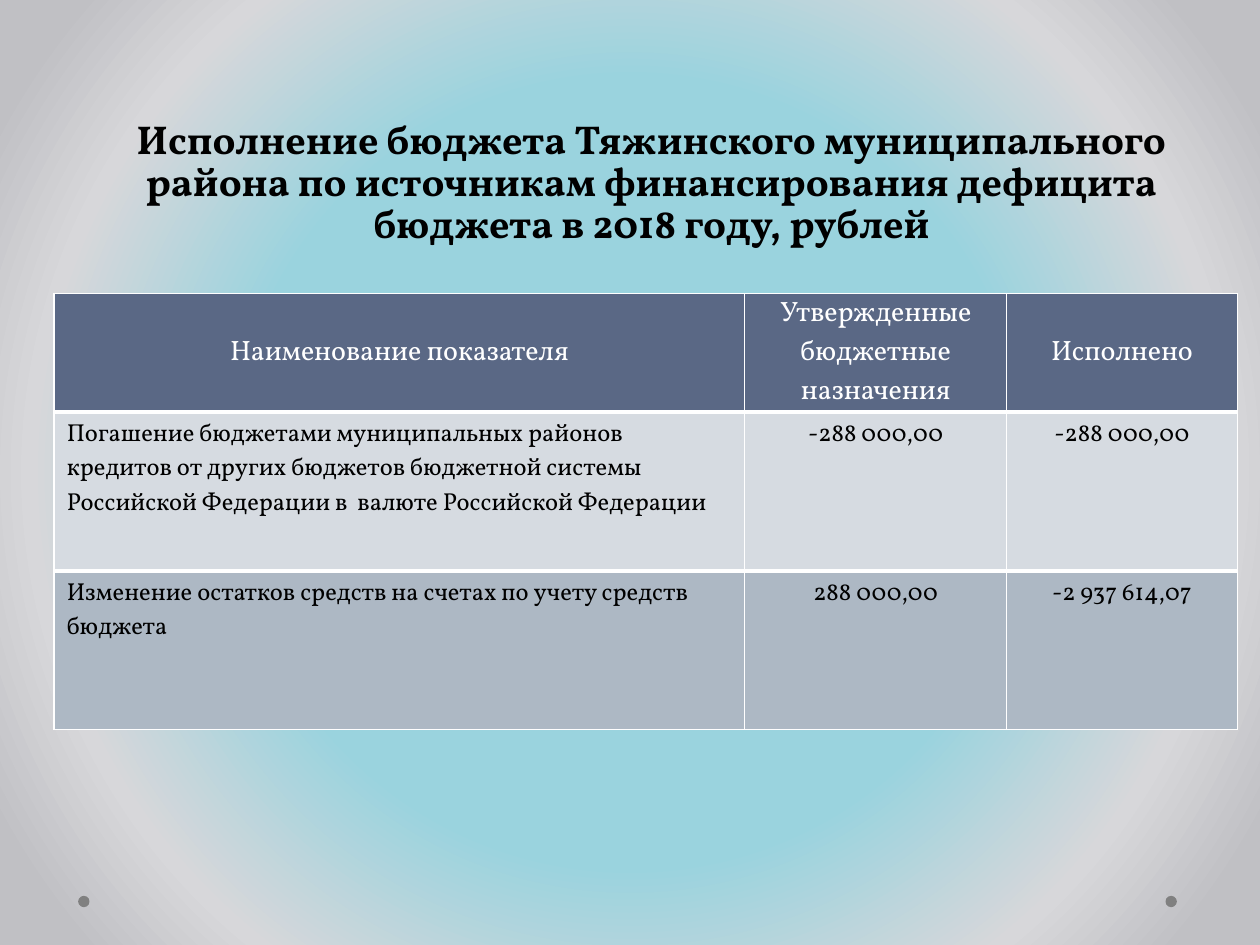
from lxml import etree
from pptx import Presentation
from pptx.dml.color import RGBColor
from pptx.enum.shapes import MSO_SHAPE
from pptx.enum.text import MSO_ANCHOR, PP_ALIGN
from pptx.oxml import parse_xml
from pptx.oxml.ns import nsdecls, qn
from pptx.util import Inches, Pt

CENTER, LEFT = PP_ALIGN.CENTER, PP_ALIGN.LEFT
FONT = "Vollkorn"
BLACK = RGBColor(0x00, 0x00, 0x00)
WHITE = RGBColor(0xFF, 0xFF, 0xFF)
GRAY = RGBColor(0x80, 0x80, 0x80)
HEADER_FILL = RGBColor(0x5A, 0x68, 0x85)
ROW_FILLS = [RGBColor(0xD6, 0xDB, 0xE1), RGBColor(0xAD, 0xB8, 0xC4)]
GLOW = [(50, "9AD3DE"), (76, "D7D7DA"), (92, "C0C0C4")]

TITLE = ("Исполнение бюджета Тяжинского муниципального района по источникам "
         "финансирования дефицита бюджета в 2018 году, рублей")
ROWS = [
    ("Наименование показателя", "Утвержденные бюджетные назначения", "Исполнено"),
    ("Погашение бюджетами муниципальных районов кредитов от других бюджетов "
     "бюджетной системы Российской Федерации в  валюте Российской Федерации",
     "-288 000,00", "-288 000,00"),
    ("Изменение остатков средств на счетах по учету средств бюджета",
     "288 000,00", "-2 937 614,07"),
]
COLUMN_WIDTHS = [5.48, 2.08, 1.83]
ROW_HEIGHTS = [0.69, 1.26, 1.26]
DOT_LEFTS = [0.62, 9.25]


def set_background(page):
    stops = "".join(f'<a:gs pos="{position * 1000}"><a:srgbClr val="{color}"/></a:gs>'
                    for position, color in GLOW)
    background = parse_xml(
        f'<p:bg {nsdecls("p", "a")}><p:bgPr><a:gradFill><a:gsLst>{stops}</a:gsLst>'
        '<a:path path="circle"><a:fillToRect l="50000" t="50000" r="50000" b="50000"/>'
        '</a:path></a:gradFill><a:effectLst/></p:bgPr></p:bg>')
    page._element.cSld.insert(0, background)


def write(frame, text, size, color, align, bold=False):
    frame.text = text
    paragraph = frame.paragraphs[0]
    paragraph.alignment = align
    font = paragraph.runs[0].font
    font.name, font.size, font.bold = FONT, Pt(size), bold
    font.color.rgb = color
    return paragraph


def add_borders(cell, top, bottom):
    """Draw white cell borders; top and bottom are widths in points."""
    properties = cell._tc.get_or_add_tcPr()
    widths = {"a:lnL": 1, "a:lnR": 1, "a:lnT": top, "a:lnB": bottom}
    for index, (tag, width) in enumerate(widths.items()):
        line = etree.Element(qn(tag), w=str(Pt(width)))
        fill = etree.SubElement(line, qn("a:solidFill"))
        etree.SubElement(fill, qn("a:srgbClr"), val=str(WHITE))
        properties.insert(index, line)


def add_budget_table(page):
    table = page.shapes.add_table(
        len(ROWS), len(COLUMN_WIDTHS), Inches(0.43), Inches(2.33),
        Inches(sum(COLUMN_WIDTHS)), Inches(sum(ROW_HEIGHTS))).table
    for column, width in zip(table.columns, COLUMN_WIDTHS):
        column.width = Inches(width)
    for row, height in zip(table.rows, ROW_HEIGHTS):
        row.height = Inches(height)
    for r, texts in enumerate(ROWS):
        for c, text in enumerate(texts):
            cell = table.cell(r, c)
            cell.fill.solid()
            if r == 0:
                cell.fill.fore_color.rgb = HEADER_FILL
                cell.vertical_anchor = MSO_ANCHOR.MIDDLE
                cell.margin_left = cell.margin_right = cell.margin_top = Inches(0.01)
                cell.margin_bottom = 0
                write(cell.text_frame, text, 16, WHITE, CENTER)
            else:
                cell.fill.fore_color.rgb = ROW_FILLS[r - 1]
                write(cell.text_frame, text, 14, BLACK, CENTER if c else LEFT)
            add_borders(cell, top=3 if r else 1, bottom=1 if r == len(ROWS) - 1 else 3)


def main():
    deck = Presentation()
    deck.slide_width, deck.slide_height = Inches(10), Inches(7.5)
    page = deck.slides.add_slide(deck.slide_layouts[5])
    set_background(page)

    for left in DOT_LEFTS:
        dot = page.shapes.add_shape(MSO_SHAPE.OVAL, Inches(left), Inches(7.11),
                                    Inches(0.09), Inches(0.09))
        dot.shadow.inherit = False
        dot.fill.solid()
        dot.fill.fore_color.rgb = GRAY
        dot.line.fill.background()

    title = page.shapes.title
    title.left, title.top = Inches(0.47), Inches(0.68)
    title.width, title.height = Inches(9.41), Inches(1.33)
    title.text_frame.word_wrap = True
    title.text_frame.vertical_anchor = MSO_ANCHOR.BOTTOM
    heading = write(title.text_frame, TITLE, 23, BLACK, CENTER, bold=True)
    heading.line_spacing = 0.87

    add_budget_table(page)
    deck.save("out.pptx")


if __name__ == "__main__":
    main()
